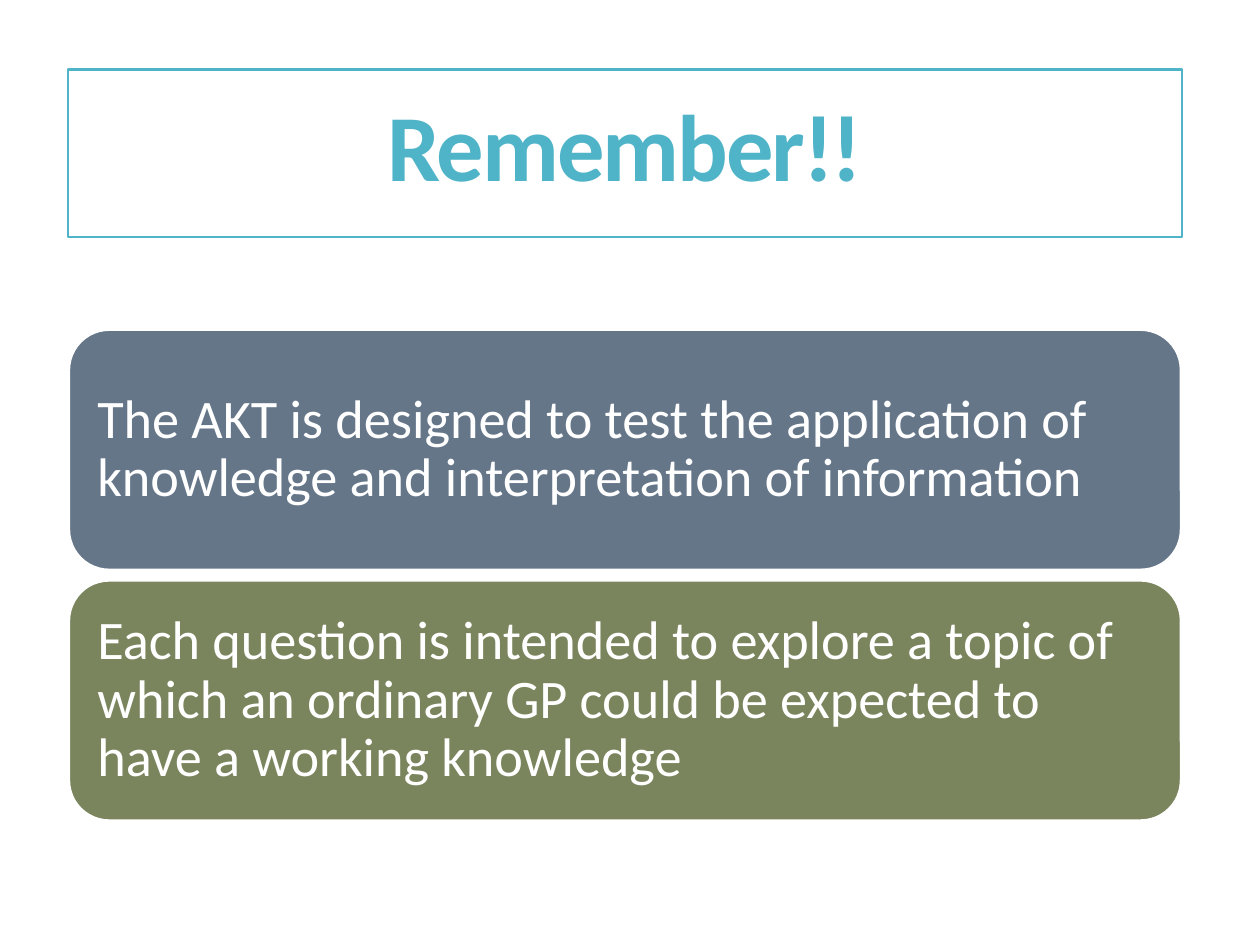
from dataclasses import dataclass

from pptx import Presentation
from pptx.dml.color import RGBColor
from pptx.enum.shapes import MSO_SHAPE
from pptx.enum.text import MSO_ANCHOR, MSO_AUTO_SIZE, PP_ALIGN
from pptx.util import Inches, Pt

ROUNDED = MSO_SHAPE.ROUNDED_RECTANGLE
MIDDLE = MSO_ANCHOR.MIDDLE
LEFT, CENTER = PP_ALIGN.LEFT, PP_ALIGN.CENTER
NO_AUTOFIT = MSO_AUTO_SIZE.NONE
TITLE_ONLY = 5


@dataclass(frozen=True)
class Theme:
    font: str = "Calibri"
    title_size: Pt = Pt(54)
    body_size: Pt = Pt(31)
    accent: RGBColor = RGBColor(0x50, 0xB4, 0xC8)
    slate: RGBColor = RGBColor(0x65, 0x76, 0x89)
    olive: RGBColor = RGBColor(0x7A, 0x85, 0x5D)
    white: RGBColor = RGBColor(0xFF, 0xFF, 0xFF)


theme = Theme()


def set_text(shape, text, size, color, align, line_spacing):
    frame = shape.text_frame
    frame.text = text
    frame.word_wrap = True
    frame.auto_size = NO_AUTOFIT
    frame.vertical_anchor = MIDDLE
    para = frame.paragraphs[0]
    para.alignment = align
    para.line_spacing = line_spacing
    para.font.name = theme.font
    para.font.size = size
    para.font.color.rgb = color
    return para


deck = Presentation()
deck.slide_width, deck.slide_height = Inches(10), Inches(7.5)
page = deck.slides.add_slide(deck.slide_layouts[TITLE_ONLY])

title = page.shapes.title
title.left, title.top = Inches(0.54), Inches(0.55)
title.width, title.height = Inches(8.84), Inches(1.33)
title.line.color.rgb = theme.accent
title.line.width = Pt(1.5)
heading = set_text(title, "Remember!!", theme.title_size, theme.accent, CENTER, 0.85)
heading.font.bold = True
# Letter spacing, in hundredths of a point
heading.runs[0]._r.get_or_add_rPr().set("spc", "-120")

messages = [
    ("The AKT is designed to test the application of knowledge "
     "and interpretation of information", theme.slate),
    ("Each question is intended to explore a topic of which an ordinary GP "
     "could be expected to have a working knowledge", theme.olive),
]
first_top, pitch, inset = Inches(2.62), Inches(1.99), Inches(0.13)

for index, (message, fill) in enumerate(messages):
    box = page.shapes.add_shape(
        ROUNDED, Inches(0.55), first_top + index * pitch, Inches(8.82), Inches(1.9))
    box.shadow.inherit = False
    box.fill.solid()
    box.fill.fore_color.rgb = fill
    box.line.color.rgb = theme.white
    box.line.width = Pt(1)
    set_text(box, message, theme.body_size, theme.white, LEFT, 0.9)
    frame = box.text_frame
    frame.margin_left = frame.margin_right = inset
    frame.margin_top = frame.margin_bottom = inset

deck.save("out.pptx")
